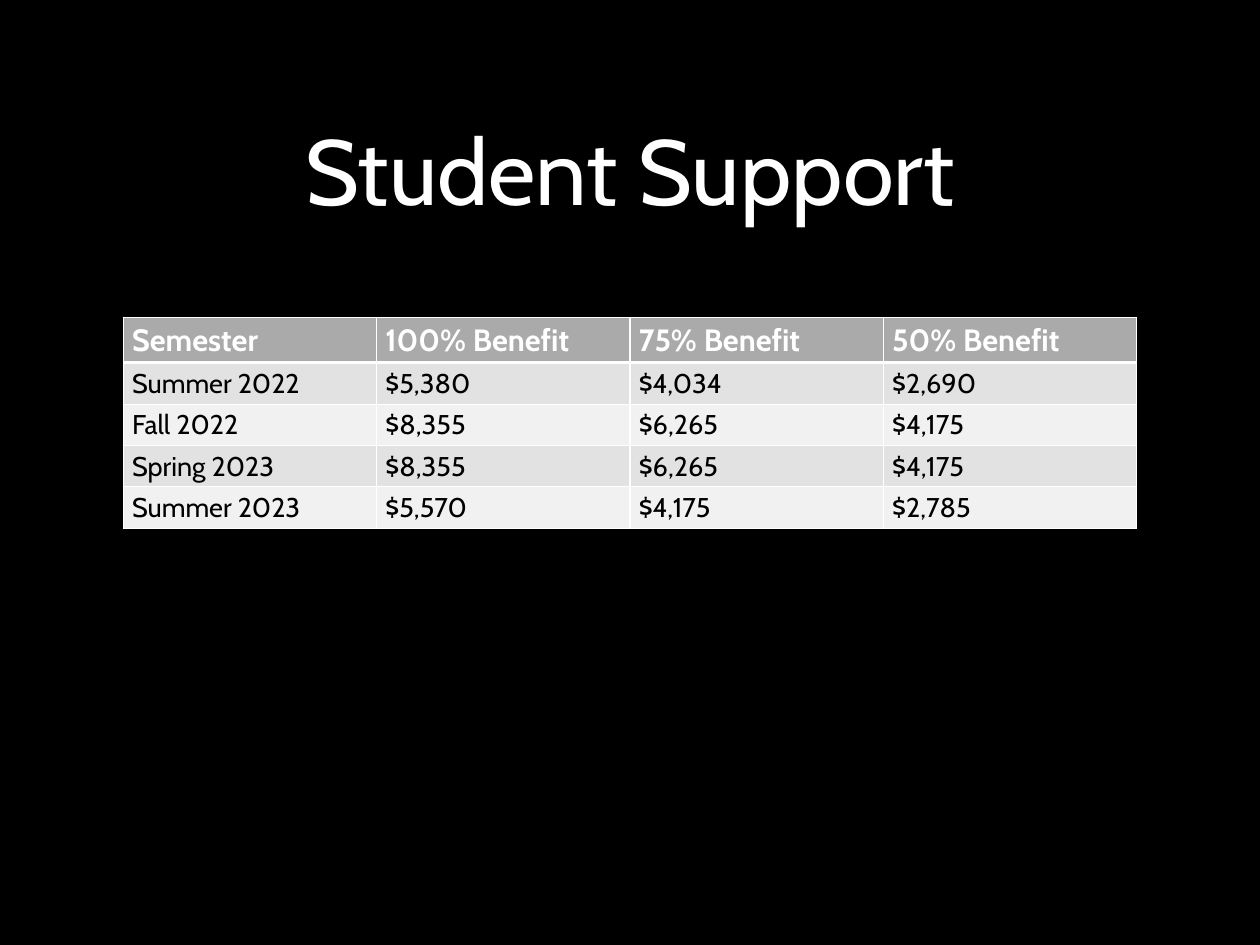
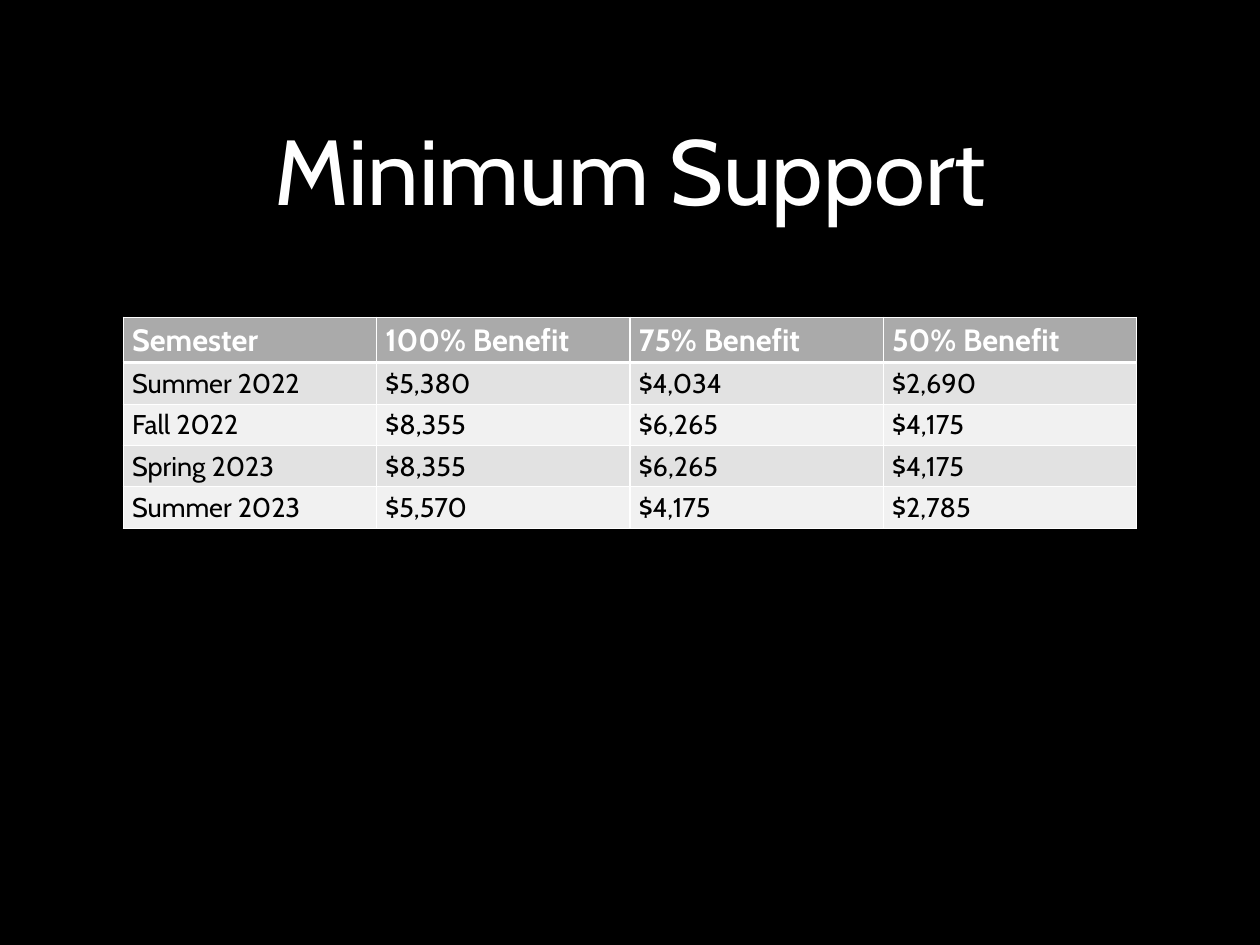
from dataclasses import dataclass

from lxml import etree
from pptx import Presentation
from pptx.dml.color import RGBColor
from pptx.enum.text import MSO_ANCHOR, PP_ALIGN
from pptx.oxml.ns import qn
from pptx.util import Inches, Pt

CENTER = PP_ALIGN.CENTER
MIDDLE = MSO_ANCHOR.MIDDLE

FONT = "Cabin"
COLORS = {
    "background": "000000",
    "light": "FFFFFF",
    "dark": "000000",
    "header": "AAAAAA",
    "odd_row": "E2E2E2",
    "even_row": "F1F1F1",
}
SLIDE_W, SLIDE_H = 14.22, 10.67
COL_W, ROW_H = 2.86, 0.41
TABLE_LEFT, TABLE_TOP = 1.39, 3.58
THIN, THICK = 1, 3

BENEFITS = [
    ["Semester", "100% Benefit", "75% Benefit", "50% Benefit"],
    ["Summer 2022", "$5,380", "$4,034", "$2,690"],
    ["Fall 2022", "$8,355", "$6,265", "$4,175"],
    ["Spring 2023", "$8,355", "$6,265", "$4,175"],
    ["Summer 2023", "$5,570", "$4,175", "$2,785"],
]


@dataclass(frozen=True)
class RowStyle:
    fill: str
    color: str
    size: int
    bold: bool
    top: int = THIN
    bottom: int = THIN


@dataclass(frozen=True)
class SupportSlide:
    title: str
    rows: list[list[str]]


SLIDES = [
    SupportSlide("Student Support", BENEFITS),
    SupportSlide("Minimum Support", BENEFITS),
]


def rgb(name: str) -> RGBColor:
    return RGBColor.from_string(COLORS[name])


def style_text(p, size: int, color: str, bold: bool = False) -> None:
    for r in p.runs:
        r.font.name = FONT
        r.font.size = Pt(size)
        r.font.bold = bold
        r.font.color.rgb = rgb(color)


def row_style(index: int) -> RowStyle:
    if index == 0:
        return RowStyle("header", "light", 25, True, bottom=THICK)
    fill = "odd_row" if index % 2 else "even_row"
    return RowStyle(fill, "dark", 22, False, top=THICK if index == 1 else THIN)


def set_borders(cell, style: RowStyle) -> None:
    tc_pr = cell._tc.get_or_add_tcPr()
    widths = {"lnL": THIN, "lnR": THIN, "lnT": style.top, "lnB": style.bottom}
    for tag, width in widths.items():
        ln = etree.SubElement(tc_pr, qn(f"a:{tag}"), w=str(Pt(width)))
        fill = etree.SubElement(ln, qn("a:solidFill"))
        etree.SubElement(fill, qn("a:srgbClr"), val=COLORS["light"])


def add_title(slide, text: str) -> None:
    box = slide.shapes.add_textbox(
        Inches(0), Inches(0.86), Inches(SLIDE_W), Inches(2.08))
    tf = box.text_frame
    tf.word_wrap = True
    tf.vertical_anchor = MIDDLE
    tf.margin_left = tf.margin_right = Inches(0.06)
    tf.margin_top = tf.margin_bottom = Inches(0.06)
    p = tf.paragraphs[0]
    p.text = text
    p.alignment = CENTER
    style_text(p, 75, "light")


def add_benefit_table(slide, rows: list[list[str]]) -> None:
    n_rows, n_cols = len(rows), len(rows[0])
    table = slide.shapes.add_table(
        n_rows, n_cols, Inches(TABLE_LEFT), Inches(TABLE_TOP),
        Inches(COL_W * n_cols), Inches(ROW_H * n_rows)).table
    for i, values in enumerate(rows):
        style = row_style(i)
        for j, value in enumerate(values):
            cell = table.cell(i, j)
            # Borders come before the fill in the cell properties
            set_borders(cell, style)
            cell.fill.solid()
            cell.fill.fore_color.rgb = rgb(style.fill)
            p = cell.text_frame.paragraphs[0]
            p.text = value
            style_text(p, style.size, style.color, style.bold)


def main() -> None:
    prs = Presentation()
    prs.slide_width, prs.slide_height = Inches(SLIDE_W), Inches(SLIDE_H)

    # Shared black background
    background = prs.slide_master.background.fill
    background.solid()
    background.fore_color.rgb = rgb("background")

    # One title and one table per slide
    blank = prs.slide_layouts[6]
    for content in SLIDES:
        slide = prs.slides.add_slide(blank)
        add_title(slide, content.title)
        add_benefit_table(slide, content.rows)

    prs.save("out.pptx")


if __name__ == "__main__":
    main()
